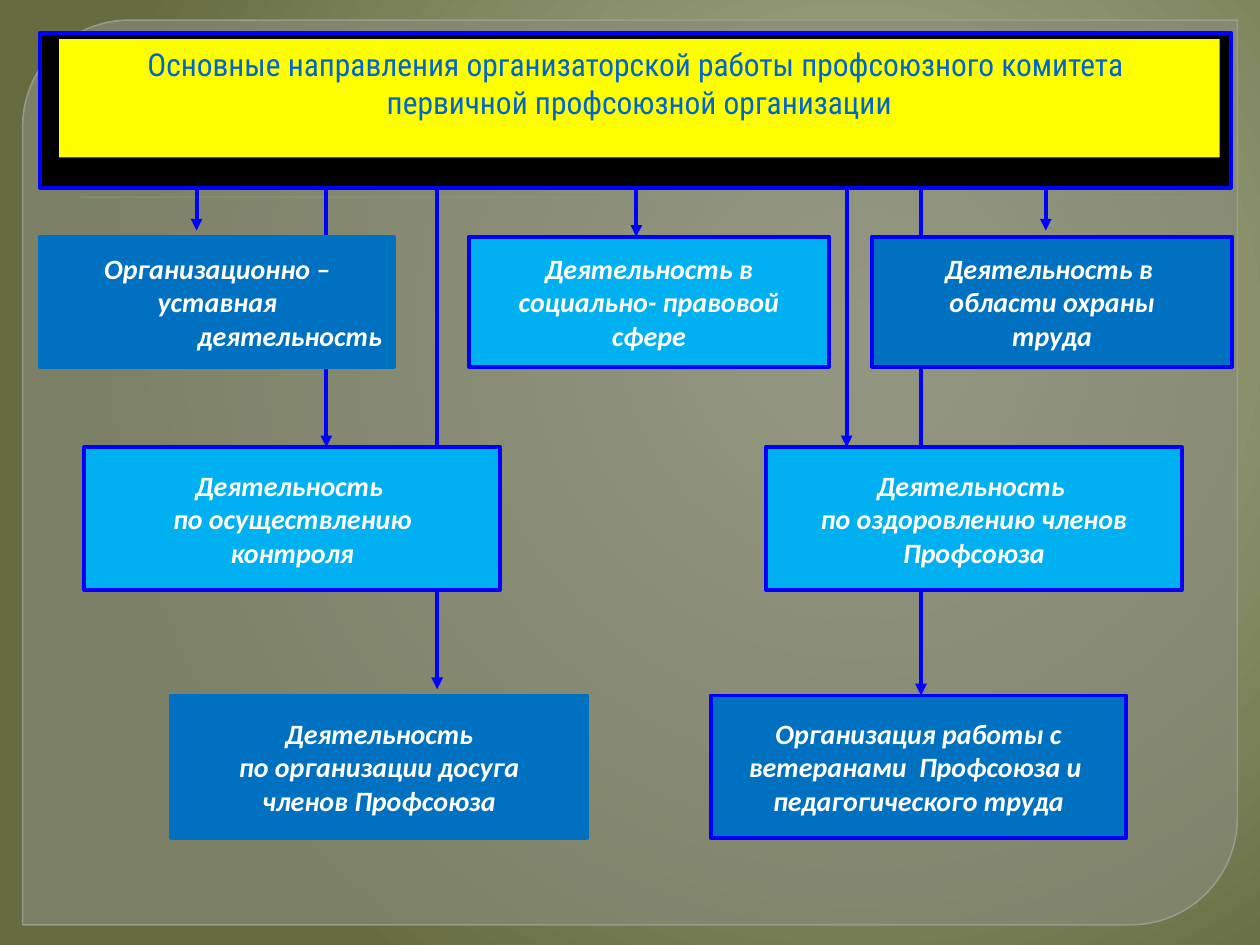
"""Build the slide on the organising work of a trade union committee."""
from lxml import etree
from pptx import Presentation
from pptx.dml.color import RGBColor
from pptx.enum.shapes import MSO_CONNECTOR, MSO_SHAPE
from pptx.enum.text import MSO_ANCHOR, MSO_AUTO_SIZE, PP_ALIGN
from pptx.oxml import parse_xml
from pptx.oxml.ns import nsdecls, qn
from pptx.util import Inches, Pt

RECT, PANEL = MSO_SHAPE.RECTANGLE, MSO_SHAPE.ROUND_2_DIAG_RECTANGLE
STRAIGHT = MSO_CONNECTOR.STRAIGHT
TOP, MIDDLE = MSO_ANCHOR.TOP, MSO_ANCHOR.MIDDLE
CENTER, RIGHT = PP_ALIGN.CENTER, PP_ALIGN.RIGHT
NO_FIT = MSO_AUTO_SIZE.NONE

COLORS = {
    "panel": "888B7B", "panel_edge": "9DA090", "rule": "72A376",
    "arrow": "0000FF", "frame": "000000", "banner": "FFFF00",
    "heading": "0066CC", "halo": "99CCFF", "dark": "0070C0",
    "light": "00B0F0", "text": "FFFFFF",
}
GLOW = [(0, "A9AE8D"), (20, "9FA583"), (100, "666C40")]
HEADING = {"name": "Roboto Condensed", "size": Pt(18), "bold": False}
LABEL = {"name": "Calibri", "size": Pt(16), "bold": True, "italic": True}

prs = Presentation()
prs.slide_width, prs.slide_height = Inches(10), Inches(7.5)
slide = prs.slides.add_slide(prs.slide_layouts[5])


def add_block(kind, area, fill, edge=None, width=2.25):
    block = slide.shapes.add_shape(kind, *map(Inches, area))
    block.shadow.inherit = False
    block.fill.solid()
    block.fill.fore_color.rgb = RGBColor.from_string(COLORS[fill])
    if edge:
        block.line.color.rgb = RGBColor.from_string(COLORS[edge])
        block.line.width = Pt(width)
    else:
        block.line.fill.background()
    return block


def write_lines(holder, lines, font_values, color, anchor):
    frame = holder.text_frame
    for key, value in {"word_wrap": False, "auto_size": NO_FIT,
                       "vertical_anchor": anchor}.items():
        setattr(frame, key, value)
    for number, line in enumerate(lines):
        paragraph = frame.add_paragraph() if number else frame.paragraphs[0]
        paragraph.alignment = CENTER
        run = paragraph.add_run()
        run.text = line
        for key, value in font_values.items():
            setattr(run.font, key, value)
        run.font.color.rgb = RGBColor.from_string(COLORS[color])
    return frame.paragraphs


slide.background.fill.solid()
backdrop = slide.element.find(".//" + qn("p:bgPr"))
stops = "".join(f'<a:gs pos="{share * 1000}"><a:srgbClr val="{tone}"/></a:gs>'
                for share, tone in GLOW)
backdrop.replace(backdrop.find(qn("a:solidFill")), parse_xml(
    f'<a:gradFill {nsdecls("a")} rotWithShape="1"><a:gsLst>{stops}</a:gsLst>'
    '<a:path path="circle"><a:fillToRect l="68000" t="35000" r="32000" b="65000"/>'
    '</a:path></a:gradFill>'))

panel = add_block(PANEL, (0.18, 0.16, 9.64, 7.18), "panel", "panel_edge", 0.87)
panel.adjustments[0], panel.adjustments[1] = 0.118, 0
for tone, opacity in zip(panel.element.spPr.iter(qn("a:srgbClr")), (65, 88)):
    etree.SubElement(tone, qn("a:alpha"), val=str(opacity * 1000))
add_block(RECT, (0.64, 1.56, 8.75, 0.01), "rule")

banner_bottom = 1.49
row_tops, row_heights = (1.88, 3.55, 5.52), (1.03, 1.13, 1.13)
arrows = [
    (7.31, row_tops[2]), (3.47, 5.47), (2.59, row_tops[1]), (6.72, row_tops[1]),
    (1.56, 1.83), (5.05, row_tops[0]), (8.3, 1.83),
]
for x, tip in arrows:
    arrow = slide.shapes.add_connector(
        STRAIGHT, *map(Inches, (x, banner_bottom, x, tip)))
    arrow.line.color.rgb = RGBColor.from_string(COLORS["arrow"])
    arrow.line.width = Pt(2.25)
    etree.SubElement(arrow.line._get_or_add_ln(), qn("a:tailEnd"), type="triangle")
    etree.SubElement(arrow.element.spPr, qn("a:effectLst"))

banner_frame = add_block(RECT, (0.32, 0.26, 9.45, 1.23), "frame", "arrow")
banner = slide.shapes.title
banner_frame.element.addnext(banner.element)
for side, length in zip(("left", "top", "width", "height"), (0.47, 0.31, 9.21, 0.94)):
    setattr(banner, side, Inches(length))
banner.fill.solid()
banner.fill.fore_color.rgb = RGBColor.from_string(COLORS["banner"])
heading = [
    "Основные направления организаторской работы профсоюзного комитета ",
    "первичной профсоюзной организации",
]
for paragraph in write_lines(banner, heading, HEADING, "heading", TOP):
    paragraph.runs[0].font.fill._xPr.insert(0, parse_xml(
        f'<a:ln {nsdecls("a")} w="{Pt(1.5)}"><a:solidFill>'
        f'<a:srgbClr val="{COLORS["halo"]}"/></a:solidFill></a:ln>'))

directions = [
    (0, 0.32, 2.81, "dark", "dark", ["Организационно –", "уставная", "деятельность"]),
    (0, 3.72, 2.86, "light", "arrow", ["Деятельность в", "социально- правовой", "сфере"]),
    (0, 6.92, 2.86, "dark", "arrow", ["Деятельность в ", "области охраны", "труда"]),
    (1, 0.67, 3.3, "light", "arrow", ["Деятельность ", "по осуществлению", "контроля"]),
    (1, 6.08, 3.3, "light", "arrow", ["Деятельность ", "по оздоровлению членов", "Профсоюза"]),
    (2, 1.36, 3.3, "dark", "dark", ["Деятельность", "по организации досуга", "членов Профсоюза"]),
    (2, 5.64, 3.3, "dark", "arrow",
     ["Организация работы с", "ветеранами  Профсоюза и ", "педагогического труда"]),
]
for row, left, width, fill, edge, lines in directions:
    direction = add_block(RECT, (left, row_tops[row], width, row_heights[row]), fill, edge)
    paragraphs = write_lines(direction, lines, LABEL, "text", MIDDLE)
    if lines[-1] == "деятельность":
        paragraphs[-1].alignment = RIGHT

prs.save("out.pptx")
